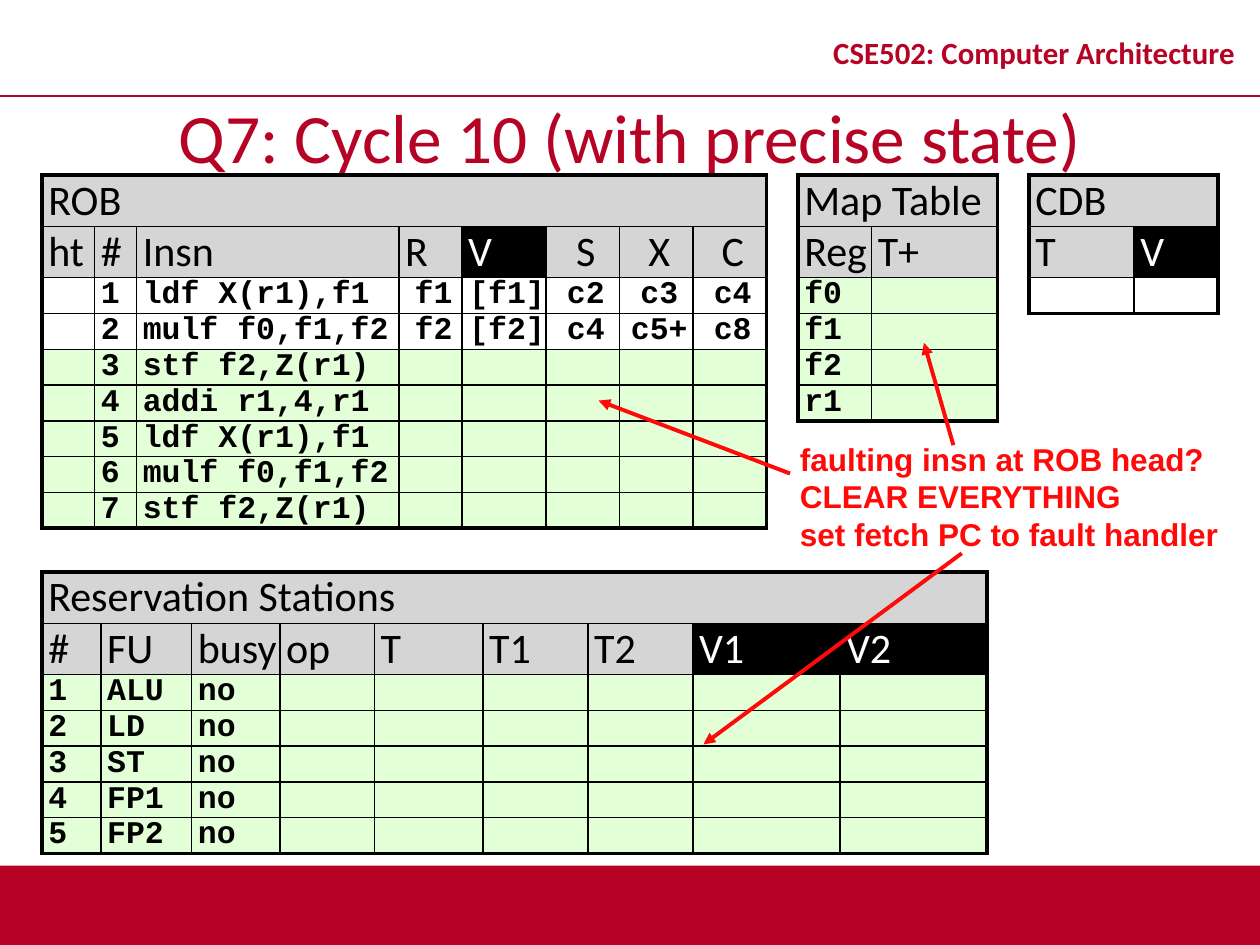
"""Build the slide on cycle 10 of Q7 with precise state."""
from dataclasses import dataclass

from lxml.etree import SubElement
from pptx import Presentation
from pptx.dml.color import RGBColor as Color
from pptx.enum.shapes import MSO_CONNECTOR as Connector, MSO_SHAPE as Shape
from pptx.enum.text import MSO_ANCHOR as Anchor, MSO_AUTO_SIZE as AutoSize, PP_ALIGN as Align
from pptx.oxml import parse_xml
from pptx.oxml.ns import nsdecls, qn
from pptx.slide import Slide
from pptx.util import Inches, Pt

CRIMSON = Color(0xB6, 0x02, 0x25)
RED = Color(0xFF, 0x09, 0x09)
GREY = Color(0xD5, 0xD5, 0xD5)
GREEN = Color(0xE2, 0xFF, 0xD8)
BLACK = Color(0, 0, 0)
WHITE = Color(0xFF, 0xFF, 0xFF)

COLUMNS, ROWS = 120, 90
UNIT = Inches(10) / COLUMNS
RULE_ROW, BAND_HEIGHT, TABLE_ROW = 9.12, 7.56, 16.68
THIN, THICK = 1, 2.25
VALUE_HEADINGS = {"V", "V1", "V2"}


@dataclass(frozen=True)
class Style:
    size: float
    font: str
    color: Color
    bold: bool = False


@dataclass(frozen=True)
class Grid:
    title: str
    column: float
    row: float
    widths: tuple[float, ...]
    headings: tuple[str, ...]
    body: tuple[tuple[str, ...], ...]
    white_rows: int = 0
    centred_heading: int = COLUMNS
    centred_body: int = COLUMNS


@dataclass(frozen=True)
class Arrow:
    start: tuple[float, float]
    end: tuple[float, float]


HEADING = Style(24, "Calibri", BLACK)
VALUE_HEADING = Style(24, "Calibri", WHITE)
CODE = Style(18, "Courier New", BLACK, True)
TITLE = Style(39.6, "Calibri", CRIMSON)
COURSE = Style(17.6, "Calibri", CRIMSON, True)
CALLOUT = Style(18, "Arial", RED, True)

INSTRUCTIONS = ("ldf X(r1),f1", "mulf f0,f1,f2", "stf f2,Z(r1)", "addi r1,4,r1",
                "ldf X(r1),f1", "mulf f0,f1,f2", "stf f2,Z(r1)")
PROGRESS = (("f1", "[f1]", "c2", "c3", "c4"), ("f2", "[f2]", "c4", "c5+", "c8"))
ROB_BODY = tuple(
    ("", str(index + 1), instruction, *(PROGRESS[index] if index < len(PROGRESS) else ()))
    for index, instruction in enumerate(INSTRUCTIONS))
UNITS = ("ALU", "LD", "ST", "FP1", "FP2")

GRIDS = (
    Grid("ROB", 4, TABLE_ROW, (5, 4, 25, 6, 8, 7, 7, 7),
         ("ht", "#", "Insn", "R", "V", "S", "X", "C"), ROB_BODY, 2, 5, 3),
    Grid("Map Table", 76, TABLE_ROW, (7, 12), ("Reg", "T+"),
         (("f0",), ("f1",), ("f2",), ("r1",))),
    Grid("Reservation Stations", 4, 54.48, (5.6, 8.65, 8.4, 9, 10.35, 10, 10, 14, 14),
         ("#", "FU", "busy", "op", "T", "T1", "T2", "V1", "V2"),
         tuple((str(number), unit, "no") for number, unit in enumerate(UNITS, 1))),
    Grid("CDB", 98, TABLE_ROW, (10, 8), ("T", "V"), ((),), 1),
)
CALLOUT_LINES = ("faulting insn at ROB head?", "CLEAR EVERYTHING", "set fetch PC to fault handler")
ARROWS = (
    Arrow((75.25, 45.1), (57, 38.15)),
    Arrow((91.6, 52.7), (67, 70.9)),
    Arrow((90.8, 42.4), (88, 32.65)),
)


def units(*lengths: float) -> list[int]:
    """Turn grid columns or rows into lengths."""
    return [round(length * UNIT) for length in lengths]


def add_text(paragraph, text: str, style: Style) -> None:
    """Add one formatted run."""
    run = paragraph.add_run()
    run.text = text
    run.font.size = Pt(style.size)
    run.font.name = style.font
    run.font.bold = style.bold
    run.font.color.rgb = style.color


def set_borders(cell, widths: dict[str, float]) -> None:
    """Give a cell its black borders."""
    properties = cell._tc.get_or_add_tcPr()
    for index, (side, width) in enumerate(widths.items()):
        properties.insert(index, parse_xml(
            f'<a:ln{side} {nsdecls("a")} w="{Pt(width)}"><a:solidFill>'
            f'<a:srgbClr val="{BLACK}"/></a:solidFill></a:ln{side}>'))


def fill_cell(cell, text: str, style: Style, fill: Color, centred: bool) -> None:
    """Fill a table cell and write its text."""
    cell.margin_left = Inches(0.05)
    cell.margin_top = cell.margin_right = cell.margin_bottom = 0
    cell.fill.solid()
    cell.fill.fore_color.rgb = fill
    paragraph = cell.text_frame.paragraphs[0]
    if centred:
        paragraph.alignment = Align.CENTER
    if text:
        add_text(paragraph, text, style)
    else:
        ending = SubElement(paragraph._p, qn("a:endParaRPr"), sz=str(style.size * 100), b="1")
        SubElement(ending, qn("a:latin"), typeface=style.font)


def add_grid(slide: Slide, grid: Grid) -> None:
    """Draw a table with a title row, a heading row and body rows."""
    row_count, column_count = len(grid.body) + 2, len(grid.widths)
    row_height = Inches(0.27)
    table = slide.shapes.add_table(
        row_count, column_count, *units(grid.column, grid.row, sum(grid.widths)),
        row_height * row_count).table
    table.first_row = table.horz_banding = False
    for column, width in zip(table.columns, units(*grid.widths)):
        column.width = width
    for row in table.rows:
        row.height = row_height
    table.cell(0, 0).merge(table.cell(0, column_count - 1))
    lines = ((grid.title,), grid.headings, *grid.body)
    for row, line in enumerate(lines):
        for column in range(column_count):
            cell = table.cell(row, column)
            text = line[column] if column < len(line) else ""
            if row > 1:
                fill = WHITE if row - 2 < grid.white_rows else GREEN
                fill_cell(cell, text, CODE, fill, column >= grid.centred_body)
            elif row == 1 and text in VALUE_HEADINGS:
                fill_cell(cell, text, VALUE_HEADING, BLACK, False)
            else:
                centred = row == 1 and column >= grid.centred_heading
                fill_cell(cell, text, HEADING, GREY, centred)
            last_column = row == 0 or column == column_count - 1
            set_borders(cell, {"L": THIN if column else THICK,
                               "R": THICK if last_column else THIN,
                               "T": THIN if row else THICK,
                               "B": THICK if row == row_count - 1 else THIN})


def add_line(slide: Slide, line: Arrow, color: Color, width: float, head: bool) -> None:
    """Draw a straight line, with an arrowhead if asked."""
    connector = slide.shapes.add_connector(Connector.STRAIGHT, *units(*line.start, *line.end))
    connector.line.color.rgb = color
    connector.line.width = Pt(width)
    SubElement(connector._element.spPr, qn("a:effectLst"))
    if head:
        SubElement(connector.line._get_or_add_ln(), qn("a:tailEnd"), type="triangle")


def add_frame(slide: Slide) -> None:
    """Draw the footer band, the header rule, the course name and the title."""
    band = slide.shapes.add_shape(
        Shape.RECTANGLE, *units(0, ROWS - BAND_HEIGHT, COLUMNS, BAND_HEIGHT))
    band.shadow.inherit = False
    band.fill.solid()
    band.fill.fore_color.rgb = CRIMSON
    band.line.fill.background()
    add_line(slide, Arrow((0, RULE_ROW), (COLUMNS, RULE_ROW)), CRIMSON, THIN, False)
    course = slide.shapes.add_textbox(*units(77, RULE_ROW - BAND_HEIGHT, 43, BAND_HEIGHT))
    title = slide.shapes.title
    title.left, title.top, title.width, title.height = units(0, RULE_ROW, COLUMNS, BAND_HEIGHT)
    for shape, text, style in ((course, "CSE502: Computer Architecture", COURSE),
                               (title, "Q7: Cycle 10 (with precise state)", TITLE)):
        shape.text_frame.word_wrap = True
        shape.text_frame.auto_size = AutoSize.NONE
        shape.text_frame.vertical_anchor = Anchor.MIDDLE
        paragraph = shape.text_frame.paragraphs[0]
        paragraph.alignment = Align.CENTER
        add_text(paragraph, text, style)
    course.text_frame.paragraphs[0].line_spacing = 0.8


def add_callout(slide: Slide) -> None:
    """Write the fault note and point its arrows at the tables."""
    frame = slide.shapes.add_textbox(*units(75, 41.28, 42.6, 12.12)).text_frame
    frame.word_wrap = False
    frame.auto_size = AutoSize.SHAPE_TO_FIT_TEXT
    for index, line in enumerate(CALLOUT_LINES):
        add_text(frame.add_paragraph() if index else frame.paragraphs[0], line, CALLOUT)
    for arrow in ARROWS:
        add_line(slide, arrow, RED, THICK, True)


def main() -> None:
    """Build and save the presentation."""
    presentation = Presentation()
    presentation.slide_width, presentation.slide_height = units(COLUMNS, ROWS)
    slide = presentation.slides.add_slide(presentation.slide_layouts[5])
    add_frame(slide)
    for grid in GRIDS:
        add_grid(slide, grid)
    add_callout(slide)
    presentation.save("out.pptx")


if __name__ == "__main__":
    main()
